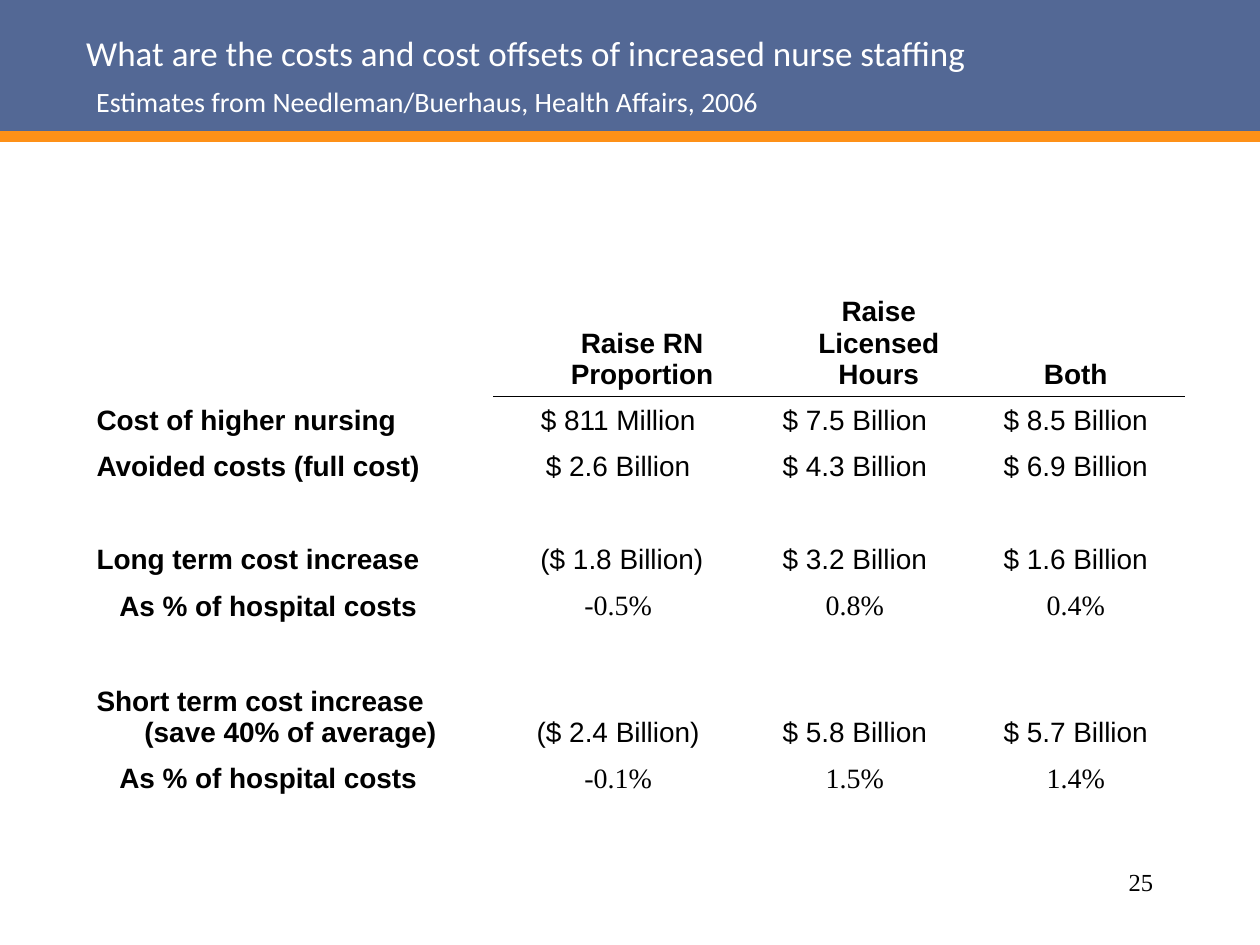
from pptx import Presentation
from pptx.dml.color import RGBColor
from pptx.enum.shapes import MSO_CONNECTOR as Connector, MSO_SHAPE as Shape
from pptx.enum.text import MSO_ANCHOR as Anchor, MSO_AUTO_SIZE as AutoSize, PP_ALIGN as Align
from pptx.oxml import parse_xml
from pptx.oxml.ns import nsdecls, qn
from pptx.util import Inches, Pt

BLUE = RGBColor(0x53, 0x68, 0x95)
ORANGE = RGBColor(0xFE, 0x91, 0x18)
WHITE = RGBColor(0xFF, 0xFF, 0xFF)
BLACK = RGBColor(0, 0, 0)
HANGING = 0.38


def grid(*units):
    return [round(Inches(1) * unit / 12) for unit in units]


def write(para, text, size, font, color, bold=False):
    span = para.add_run()
    span.text = text
    span.font.size = Pt(size)
    span.font.name = font
    span.font.bold = bold
    span.font.color.rgb = color


deck = Presentation()
deck.slide_width, deck.slide_height = grid(120, 90)
page = deck.slides.add_slide(deck.slide_layouts[5])

band = page.shapes.add_shape(Shape.RECTANGLE, *grid(0, 0, 120, 13))
band.shadow.inherit = False
band.fill.solid()
band.fill.fore_color.rgb = BLUE
band.line.fill.background()

rule = page.shapes.add_connector(Connector.STRAIGHT, *grid(0, 13, 120, 13))
rule.line.color.rgb = ORANGE
rule.line.width = Pt(6)
rule._element.spPr.append(parse_xml(f"<a:effectLst {nsdecls('a')}/>"))

title = page.shapes.title
title.left, title.top, title.width, title.height = grid(7, 0, 108, 15)
page.shapes._spTree.append(title._element)
heading = title.text_frame
heading.auto_size = AutoSize.NONE
heading.word_wrap = True
heading.vertical_anchor = Anchor.MIDDLE
heading.margin_bottom = Inches(0.11)
para = heading.paragraphs[0]
para.alignment = Align.LEFT
write(para, "What are the costs and cost offsets of increased nurse staffing", 20, "Calibri", WHITE)
para = heading.add_paragraph()
para.alignment = Align.LEFT
para.space_before = Pt(6)
para._p.get_or_add_pPr().set("marL", str(Inches(0.08)))
write(para, "Estimates from Needleman/Buerhaus, Health Affairs, 2006", 16, "Calibri", WHITE)

box = page.shapes.add_textbox(*grid(86, 82, 25, 6))
box.text_frame.word_wrap = True
para = box.text_frame.paragraphs[0]
para.alignment = Align.RIGHT
write(para, "25", 14, "Times New Roman", BLACK)

ROWS = [
    ["", "Raise RN Proportion", "Raise Licensed Hours", "Both"],
    ["Cost of higher nursing", "$ 811 Million", "$ 7.5 Billion", "$ 8.5 Billion"],
    ["Avoided costs (full cost)", "$ 2.6 Billion", "$ 4.3 Billion", "$ 6.9 Billion"],
    [""] * 4,
    ["Long term cost increase", "($ 1.8 Billion)", "$ 3.2 Billion", "$ 1.6 Billion"],
    ["As % of hospital costs", "-0.5%", "0.8%", "0.4%"],
    [""] * 4,
    ["Short term cost increase (save 40% of average)", "($ 2.4 Billion)", "$ 5.8 Billion", "$ 5.7 Billion"],
    ["As % of hospital costs", "-0.1%", "1.5%", "1.4%"],
]
FIRST_INDENT = {
    "Raise RN Proportion": 0,
    "Raise Licensed Hours": 0,
    "($ 1.8 Billion)": -0.32,
    "As % of hospital costs": -0.2,
}

table = page.shapes.add_table(len(ROWS), 4, *grid(8, 26, 105, 50)).table
table.first_row = table.horz_banding = False
for column, width in zip(table.columns, grid(39, 23.75, 21.33, 20.75)):
    column.width = width
for row, height in zip(table.rows, grid(11.75, *[4.42] * 6, 7.5, 4.42)):
    row.height = height

for y, texts in enumerate(ROWS):
    for x, text in enumerate(texts):
        cell = table.cell(y, x)
        cell.vertical_anchor = Anchor.BOTTOM
        para = cell.text_frame.paragraphs[0]
        if text:
            para.alignment = Align.CENTER if x else Align.LEFT
            layout = para._p.get_or_add_pPr()
            layout.set("marL", str(Inches(HANGING)))
            layout.set("indent", str(Inches(FIRST_INDENT.get(text, -HANGING))))
            font = "Times New Roman" if x and text.endswith("%") else "Arial"
            write(para, text, 16, font, BLACK, bold=x == 0 or y == 0)
        else:
            para._p.append(parse_xml(f'<a:endParaRPr {nsdecls("a")} sz="1600"/>'))
        borders = cell._tc.get_or_add_tcPr()
        for side in ("lnL", "lnR", "lnT", "lnB"):
            ruled = x > 0 and (y, side) in ((0, "lnB"), (1, "lnT"))
            paint = f'<a:solidFill><a:srgbClr val="{BLACK}"/></a:solidFill>' if ruled else "<a:noFill/>"
            borders.append(parse_xml(f'<a:{side} {nsdecls("a")} w="{Pt(1)}">{paint}</a:{side}>'))
        cell.fill.background()

deck.save("out.pptx")
